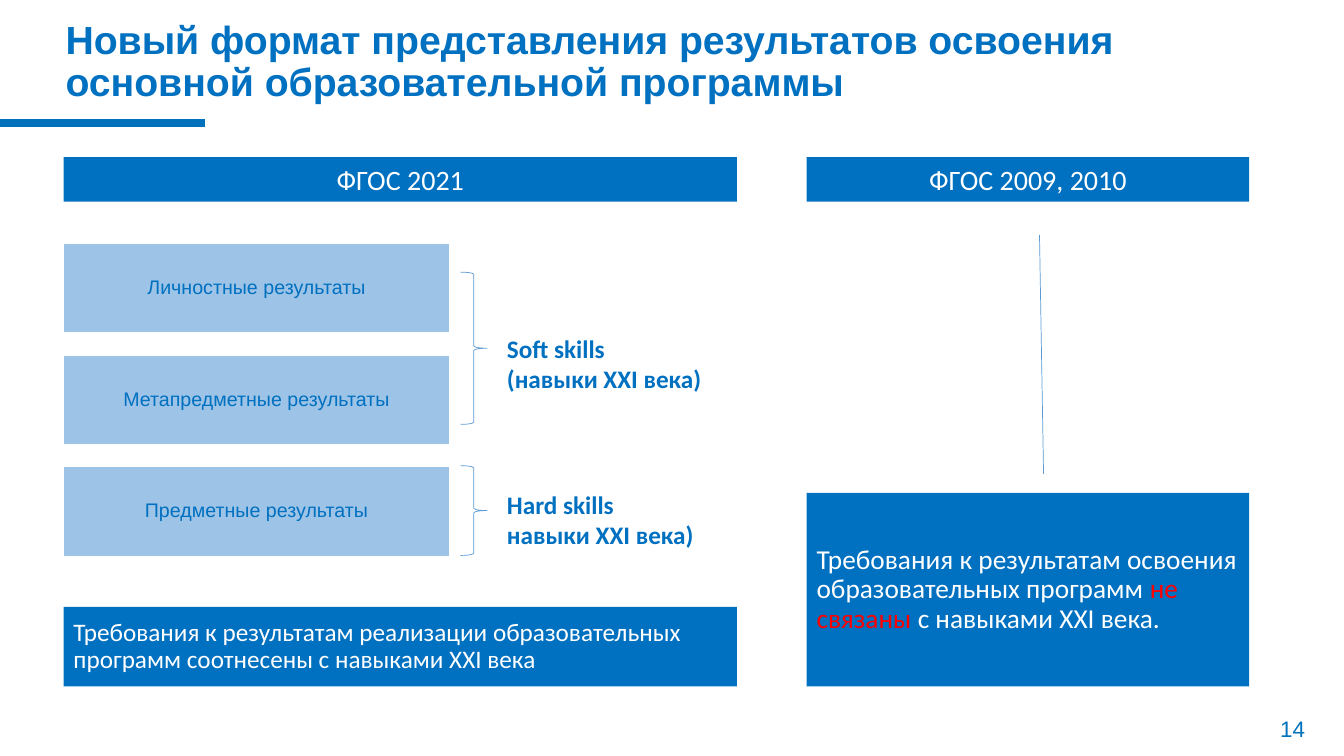
from lxml.etree import SubElement
from pptx import Presentation
from pptx.dml.color import RGBColor
from pptx.enum.shapes import MSO_CONNECTOR, MSO_SHAPE
from pptx.enum.text import MSO_ANCHOR, MSO_AUTO_SIZE, PP_ALIGN
from pptx.oxml.ns import qn
from pptx.util import Inches, Pt

BLUE = RGBColor(0x00, 0x70, 0xC0)
ACCENT = RGBColor(0x00, 0x72, 0xBC)
LIGHT_BLUE = RGBColor(0x9D, 0xC3, 0xE6)
THIN_BLUE = RGBColor(0x5B, 0x9B, 0xD5)
WHITE = RGBColor(0xFF, 0xFF, 0xFF)
RED = RGBColor(0xFF, 0x00, 0x00)

LEFT_X, LEFT_W = 0.63, 6.68
RIGHT_X, RIGHT_W = 8, 4.39
HEADER_Y, HEADER_H = 1.56, 0.44
BOTTOM = 6.81
RESULT_Y, RESULT_W, RESULT_H, RESULT_STEP = 2.41, 3.83, 0.89, 1.11
RESULTS = ["Личностные результаты", "Метапредметные результаты", "Предметные результаты"]
SKILLS = [
    ("Soft skills\n(навыки XXI века)", 3.26, 2.7, 1.51),
    ("Hard skills\nнавыки XXI века)", 4.8, 4.62, 0.89),
]


class SlideBuilder:
    def __init__(self, slide, font="Calibri", text_color=BLUE):
        self.slide = slide
        self.font = font
        self.text_color = text_color

    def set_text(self, sp, text, size, color=None, font=None, bold=False,
                 align=PP_ALIGN.LEFT, anchor=MSO_ANCHOR.MIDDLE, spacing=1.0):
        tf = sp.text_frame
        tf.text = text
        tf.word_wrap = True
        tf.auto_size = MSO_AUTO_SIZE.NONE
        tf.vertical_anchor = anchor
        for p in tf.paragraphs:
            p.alignment = align
            p.line_spacing = spacing
            p.space_before = Pt(0)
            for r in p.runs:
                r.font.name = font or self.font
                r.font.size = Pt(size)
                r.font.bold = bold
                r.font.color.rgb = color or self.text_color
        return sp

    def title(self, text, x, y, w, h):
        sp = self.slide.shapes.title
        sp.left, sp.top, sp.width, sp.height = map(Inches, (x, y, w, h))
        self.set_text(sp, text, 28, font="Arial", bold=True, spacing=0.9)

    def label(self, text, x, y, w, h, size, **style):
        sp = self.slide.shapes.add_textbox(*map(Inches, (x, y, w, h)))
        self.set_text(sp, text, size, **style)

    def box(self, text, x, y, w, h, size, fill=BLUE, color=WHITE, **style):
        sp = self.slide.shapes.add_shape(MSO_SHAPE.RECTANGLE, *map(Inches, (x, y, w, h)))
        sp.shadow.inherit = False
        sp.fill.solid()
        sp.fill.fore_color.rgb = fill
        sp.line.fill.background()
        return self.set_text(sp, text, size, color=color, **style)

    def brace(self, x, y, w, h):
        sp = self.slide.shapes.add_shape(MSO_SHAPE.RIGHT_BRACE, *map(Inches, (x, y, w, h)))
        sp.shadow.inherit = False
        sp.fill.background()
        sp.line.color.rgb = THIN_BLUE
        sp.line.width = Pt(0.5)

    def line(self, x1, y1, x2, y2, color, width):
        cxn = self.slide.shapes.add_connector(
            MSO_CONNECTOR.STRAIGHT, *map(Inches, (x1, y1, x2, y2)))
        cxn.line.color.rgb = color
        cxn.line.width = Pt(width)
        SubElement(cxn._element.spPr, qn("a:effectLst"))

    def append_run(self, sp, text, color):
        """Continue the last paragraph in the same font and size, in another colour."""
        p = sp.text_frame.paragraphs[-1]
        base = p.runs[0].font
        r = p.add_run()
        r.text = text
        r.font.name, r.font.size = base.name, base.size
        r.font.color.rgb = color


def main():
    prs = Presentation()
    prs.slide_width, prs.slide_height = Inches(13.33), Inches(7.5)
    s = SlideBuilder(prs.slides.add_slide(prs.slide_layouts[5]))

    s.title("Новый формат представления результатов освоения\n"
            "основной образовательной программы", 0.55, 0.1, 11.95, 1.04)
    s.line(0, 1.22, 2.03, 1.22, ACCENT, 6)

    for text, x, w in (("ФГОС 2021", LEFT_X, LEFT_W), ("ФГОС 2009, 2010", RIGHT_X, RIGHT_W)):
        s.box(text, x, HEADER_Y, w, HEADER_H, 20,
              align=PP_ALIGN.CENTER, anchor=MSO_ANCHOR.TOP)

    for i, text in enumerate(RESULTS):
        sp = s.box(text, LEFT_X, RESULT_Y + i * RESULT_STEP, RESULT_W, RESULT_H, 14,
                   fill=LIGHT_BLUE, color=BLUE, font="Arial",
                   align=PP_ALIGN.CENTER, spacing=0.9)
        sp.line.color.rgb = WHITE
        sp.line.width = Pt(1)

    for text, text_y, brace_y, brace_h in SKILLS:
        s.brace(4.57, brace_y, 0.26, brace_h)
        s.label(text, 4.93, text_y, 2.23, 1.01, 18, bold=True,
                align=PP_ALIGN.JUSTIFY, anchor=MSO_ANCHOR.TOP)

    s.box("Требования к результатам реализации образовательных программ "
          "соотнесены с навыками XXI века",
          LEFT_X, 6.02, LEFT_W, BOTTOM - 6.02, 18, spacing=0.9)

    s.line(10.31, 2.33, 10.35, 4.7, THIN_BLUE, 0.5)
    conclusion = s.box("Требования к результатам освоения образовательных программ ",
                       RIGHT_X, 4.89, RIGHT_W, BOTTOM - 4.89, 19.5, spacing=0.9)
    s.append_run(conclusion, "не связаны ", RED)
    s.append_run(conclusion, "с навыками XXI века.", WHITE)

    s.label("14", 12.42, 7.02, 0.8, 0.41, 16, color=ACCENT, font="Arial",
            align=PP_ALIGN.CENTER)
    prs.save("out.pptx")


if __name__ == "__main__":
    main()
